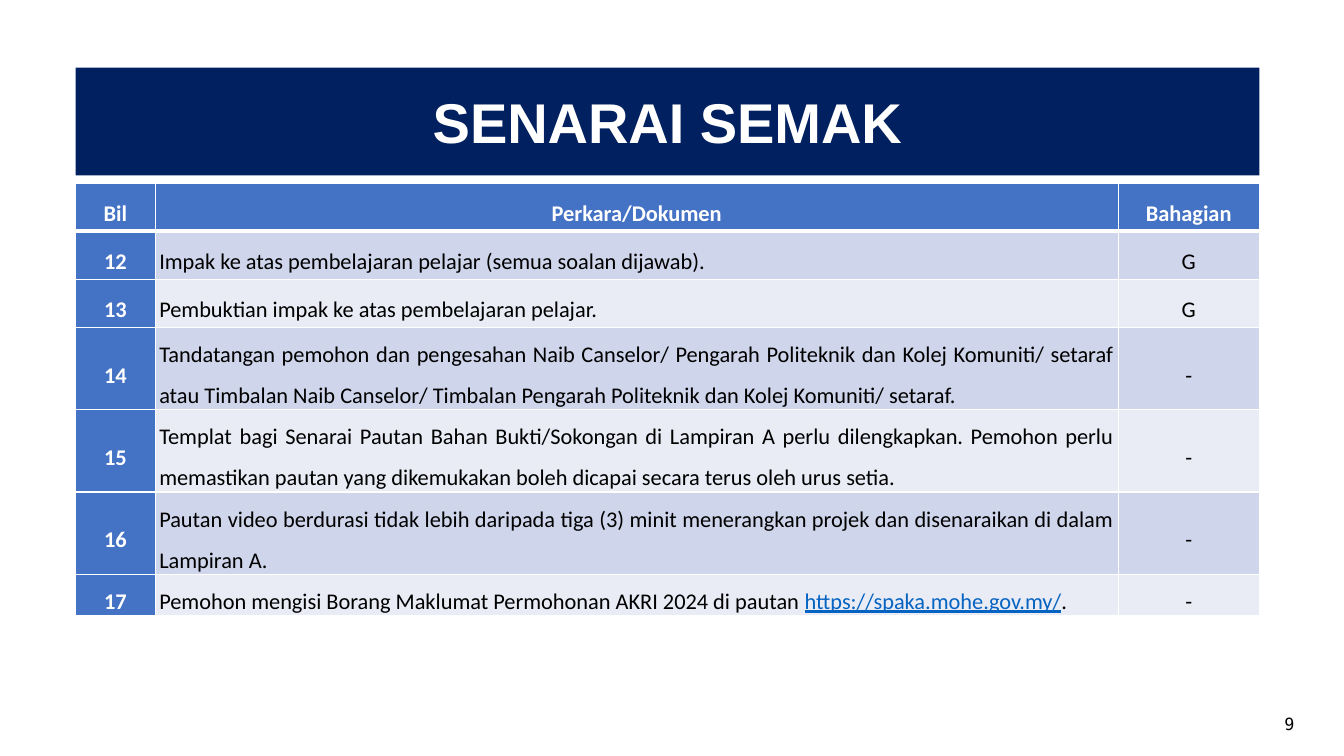
from dataclasses import dataclass

from lxml import etree
from pptx import Presentation
from pptx.dml.color import RGBColor
from pptx.enum import text
from pptx.oxml import ns
from pptx.util import Inches, Pt

COLOURS = {
    "navy": "002060",
    "blue": "4472C4",
    "band_dark": "CFD5EA",
    "band_light": "E9EBF5",
    "link": "0563C1",
    "white": "FFFFFF",
    "black": "000000",
}
LEFT, WIDTH = 0.75, 11.74
COLUMN_WIDTHS = [0.79, 9.55, 1.4]
HEADER_HEIGHT = 0.47
HEADINGS = ["Bil", "Perkara/Dokumen", "Bahagian"]
FIRST_NUMBER = 12
CENTER, JUSTIFY = text.PP_ALIGN.CENTER, text.PP_ALIGN.JUSTIFY


@dataclass
class ChecklistItem:
    document: str
    section: str
    height: float
    link: str = ""
    ending: str = ""


ITEMS = [
    ChecklistItem("Impak ke atas pembelajaran pelajar (semua soalan dijawab).", "G", 0.48),
    ChecklistItem("Pembuktian impak ke atas pembelajaran pelajar.", "G", 0.48),
    ChecklistItem(
        "Tandatangan pemohon dan pengesahan Naib Canselor/ Pengarah Politeknik dan Kolej "
        "Komuniti/ setaraf atau Timbalan Naib Canselor/ Timbalan Pengarah Politeknik dan "
        "Kolej Komuniti/ setaraf.", "-", 0.48),
    ChecklistItem(
        "Templat bagi Senarai Pautan Bahan Bukti/Sokongan di Lampiran A perlu dilengkapkan. "
        "Pemohon perlu memastikan pautan yang dikemukakan boleh dicapai secara terus oleh "
        "urus setia.", "-", 0.58),
    ChecklistItem(
        "Pautan video berdurasi tidak lebih daripada tiga (3) minit menerangkan projek dan "
        "disenaraikan di dalam Lampiran A.", "-", 0.39),
    ChecklistItem("Pemohon mengisi Borang Maklumat Permohonan AKRI 2024 di pautan ", "-", 0.29,
                  "https://spaka.mohe.gov.my/", "."),
]


def rgb(colour: str) -> RGBColor:
    return RGBColor.from_string(COLOURS[colour])


def style_font(font, face: str, size: int, colour: str, bold: bool = False) -> None:
    font.name, font.size, font.bold = face, Pt(size), bold
    font.color.rgb = rgb(colour)


def add_borders(cell, top: int, bottom: int) -> None:
    properties = cell._tc.get_or_add_tcPr()
    sides = {"lnL": 1, "lnR": 1, "lnT": top, "lnB": bottom}
    for position, (side, points) in enumerate(sides.items()):
        line = etree.Element(ns.qn(f"a:{side}"), w=str(Pt(points)))
        fill = etree.SubElement(line, ns.qn("a:solidFill"))
        etree.SubElement(fill, ns.qn("a:srgbClr"), val=COLOURS["white"])
        properties.insert(position, line)


def fill_cell(cell, wording: str, fill: str, colour: str = "black", bold: bool = False,
              align=CENTER, top: int = 1, bottom: int = 1) -> None:
    cell.margin_left = cell.margin_right = Inches(0.04)
    cell.margin_top = cell.margin_bottom = 0
    cell.vertical_anchor = text.MSO_ANCHOR.MIDDLE
    cell.fill.solid()
    cell.fill.fore_color.rgb = rgb(fill)
    add_borders(cell, top, bottom)
    paragraph = cell.text_frame.paragraphs[0]
    paragraph.text = wording
    paragraph.alignment = align
    paragraph.line_spacing = 1.5
    style_font(paragraph.runs[0].font, "Calibri", 16, colour, bold)


def add_link(cell, item: ChecklistItem) -> None:
    paragraph = cell.text_frame.paragraphs[0]
    for wording, colour in ((item.link, "link"), (item.ending, "black")):
        run = paragraph.add_run()
        run.text = wording
        style_font(run.font, "Calibri", 16, colour)
        run.font.underline = colour == "link"


def add_title(slide) -> None:
    title = slide.shapes.title
    title.left, title.top = Inches(LEFT), Inches(0.67)
    title.width, title.height = Inches(WIDTH), Inches(1.07)
    title.fill.solid()
    title.fill.fore_color.rgb = rgb("navy")
    frame = title.text_frame
    frame.text = "SENARAI SEMAK"
    frame.auto_size = text.MSO_AUTO_SIZE.NONE
    frame.vertical_anchor = text.MSO_ANCHOR.MIDDLE
    frame.margin_left = frame.margin_right = Inches(0.13)
    frame.margin_top = frame.margin_bottom = Inches(0.07)
    frame.paragraphs[0].alignment = CENTER
    style_font(frame.paragraphs[0].runs[0].font, "Arial", 40, "white", True)


def add_checklist(slide) -> None:
    table_frame = slide.shapes.add_table(
        len(ITEMS) + 1, len(HEADINGS), Inches(LEFT), Inches(1.82), Inches(WIDTH), Inches(4.07))
    checklist = table_frame.table
    for column, width in zip(checklist.columns, COLUMN_WIDTHS):
        column.width = Inches(width)
    heights = [HEADER_HEIGHT] + [item.height for item in ITEMS]
    for row, height in zip(checklist.rows, heights):
        row.height = Inches(height)
    table_frame.height = Inches(4.07)

    # Heading row
    for column, heading in enumerate(HEADINGS):
        fill_cell(checklist.cell(0, column), heading, "blue", "white", True, bottom=3)

    # Numbered, banded rows
    for row, item in enumerate(ITEMS, start=1):
        band = "band_dark" if row % 2 else "band_light"
        top = 3 if row == 1 else 1
        number, document, section = (checklist.cell(row, column) for column in range(3))
        fill_cell(number, str(FIRST_NUMBER + row - 1), "blue", "white", True, top=top)
        fill_cell(document, item.document, band, align=JUSTIFY, top=top)
        fill_cell(section, item.section, band, top=top)
        if item.link:
            add_link(document, item)


def add_page_number(slide) -> None:
    page_number = slide.shapes.add_textbox(
        Inches(12.64), Inches(7.03), Inches(0.61), Inches(0.4))
    page_number.text_frame.word_wrap = True
    page_number.text_frame.text = "9"
    style_font(page_number.text_frame.paragraphs[0].runs[0].font,
               "DejaVu Sans Mono", 12, "black")


def main() -> None:
    deck = Presentation()
    deck.slide_width, deck.slide_height = Inches(13.33), Inches(7.5)
    slide = deck.slides.add_slide(deck.slide_layouts[5])
    add_title(slide)
    add_checklist(slide)
    add_page_number(slide)
    deck.save("out.pptx")


if __name__ == "__main__":
    main()
